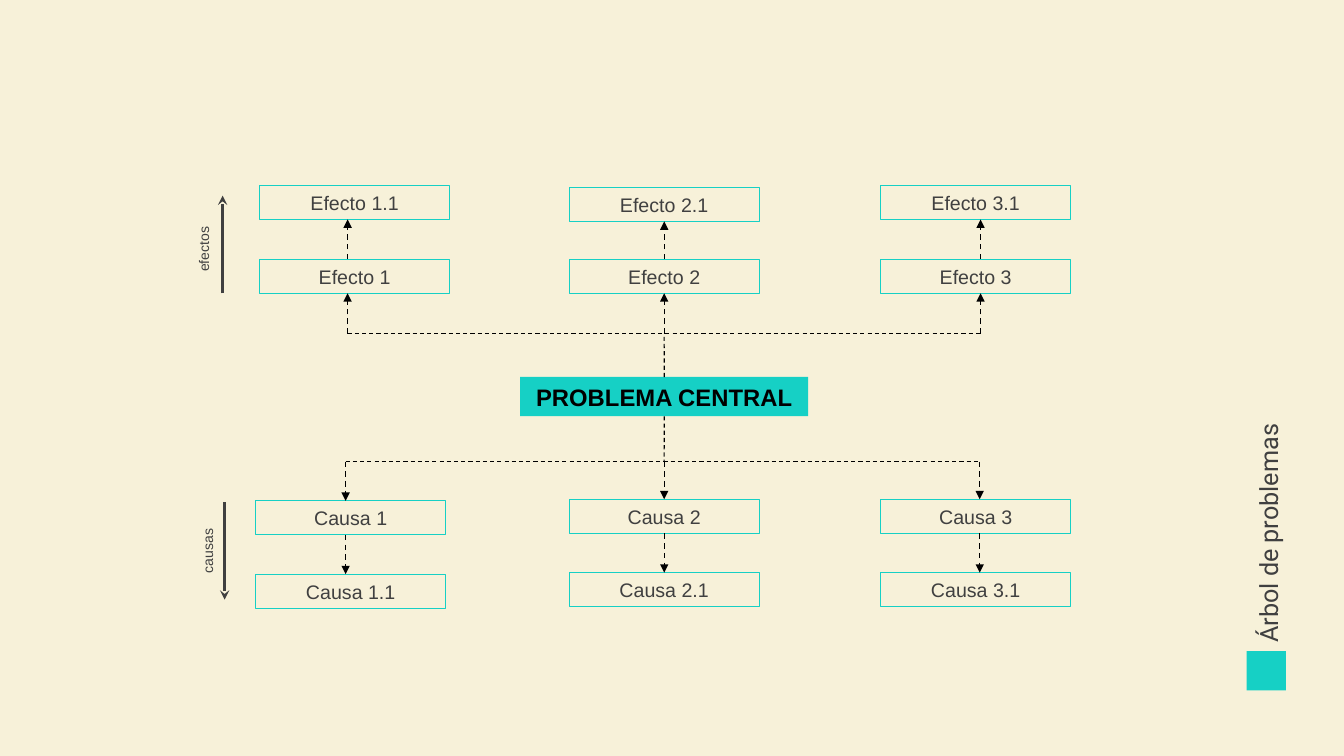
from lxml import etree
from pptx import Presentation
from pptx.dml.color import RGBColor
from pptx.enum.dml import MSO_LINE
from pptx.enum.shapes import MSO_CONNECTOR, MSO_SHAPE
from pptx.enum.text import MSO_ANCHOR, MSO_AUTO_SIZE, PP_ALIGN
from pptx.oxml.ns import qn
from pptx.util import Cm, Pt

RECT = MSO_SHAPE.RECTANGLE
STRAIGHT = MSO_CONNECTOR.STRAIGHT
DASH = MSO_LINE.DASH
CENTER = PP_ALIGN.CENTER
MIDDLE = MSO_ANCHOR.MIDDLE
FIXED = MSO_AUTO_SIZE.NONE

CREAM = RGBColor(0xF7, 0xF1, 0xD9)
TEAL = RGBColor(0x16, 0xD0, 0xC5)
GRAY = RGBColor(0x40, 0x40, 0x40)
BLACK = RGBColor(0, 0, 0)

TOP, BOTTOM = 0, 2
MID = 16.74
WIDE, HIGH = 4.78, 0.86
UP_BAR, LOW_BAR = 8.41, 11.63

EFFECTS = [
    ("Efecto 1", 6.55, 6.53, 4.67, 8.76),
    ("Efecto 2", MID - WIDE / 2, 6.53, 4.72, MID),
    ("Efecto 3", 22.2, 6.53, 4.67, 24.71),
]
CAUSES = [
    ("Causa 1", 6.45, 12.62, 14.47, 8.71),
    ("Causa 2", MID - WIDE / 2, 12.58, 14.43, MID),
    ("Causa 3", 22.2, 12.58, 14.43, 24.69),
]


def write(shape, text, size, color=GRAY, font="Arial", bold=False):
    frame = shape.text_frame
    frame.text = text
    frame.auto_size = FIXED
    frame.word_wrap = True
    frame.vertical_anchor = MIDDLE
    frame.margin_left = frame.margin_right = 0
    frame.margin_top = frame.margin_bottom = 0
    par = frame.paragraphs[0]
    par.alignment = CENTER
    par.font.size = Pt(size)
    par.font.name = font
    par.font.bold = bold
    par.font.color.rgb = color


def add_box(slide, left, top, width, height, filled=False):
    box = slide.shapes.add_shape(RECT, Cm(left), Cm(top), Cm(width), Cm(height))
    box.shadow.inherit = False
    if filled:
        box.fill.solid()
        box.fill.fore_color.rgb = TEAL
        box.line.fill.background()
    else:
        box.fill.background()
        box.line.color.rgb = TEAL
        box.line.width = Pt(0.75)
    return box


def add_line(slide, start, end, width=0.75, color=BLACK, dash=DASH, head=None):
    line = slide.shapes.add_connector(
        STRAIGHT, Cm(start[0]), Cm(start[1]), Cm(end[0]), Cm(end[1]))
    line.line.color.rgb = color
    line.line.width = Pt(width)
    line.line.dash_style = dash
    props = line._element.spPr
    if head:
        etree.SubElement(props.find(qn("a:ln")), qn("a:tailEnd"), type=head)
    etree.SubElement(props, qn("a:effectLst"))
    return line


def add_branch(slide, name, left, near, far, x, bar):
    inner = add_box(slide, left, near, WIDE, HIGH)
    write(inner, name, 14)
    outer = add_box(slide, left, far, WIDE, HIGH)
    write(outer, f"{name}.1", 14)
    rising = far < near
    enter, leave = (BOTTOM, TOP) if rising else (TOP, BOTTOM)
    near_in, near_out = (near + HIGH, near) if rising else (near, near + HIGH)
    far_in = far + HIGH if rising else far
    stem = add_line(slide, (x, bar), (x, near_in), 1, head="triangle")
    link = add_line(slide, (x, near_out), (x, far_in), 1, head="triangle")
    if x == MID:
        stem.end_connect(inner, enter)
        link.begin_connect(inner, leave)
        link.end_connect(outer, enter)


def add_side(slide, text, left, top, x, start, end):
    add_line(slide, (x, start), (x, end), 2.25, GRAY, None, "stealth")
    label = slide.shapes.add_textbox(Cm(left), Cm(top), Cm(1.68), Cm(0.69))
    label.rotation = 270
    write(label, text, 10)


def add_title(slide):
    title = slide.shapes.title
    title.left, title.top = Cm(28.83), Cm(12.93)
    title.width, title.height = Cm(6.25), Cm(1.02)
    title.rotation = 270
    write(title, "Árbol de problemas", 18, font="Roboto")
    add_box(slide, 31.42, 16.41, 0.99, 0.99, True)


def main():
    deck = Presentation()
    deck.slide_width, deck.slide_height = Cm(33.87), Cm(19.05)
    slide = deck.slides.add_slide(deck.slide_layouts[5])
    slide.background.fill.solid()
    slide.background.fill.fore_color.rgb = CREAM
    add_title(slide)

    core = add_box(slide, MID - 3.63, 9.5, 7.26, 0.99, True)
    write(core, "PROBLEMA CENTRAL", 17, BLACK, bold=True)
    for rows, bar, side, edge in (
            (EFFECTS, UP_BAR, TOP, 9.5), (CAUSES, LOW_BAR, BOTTOM, 10.49)):
        add_line(slide, (rows[0][-1], bar), (rows[-1][-1], bar))
        trunk = add_line(slide, (MID, edge), (MID, bar))
        trunk.begin_connect(core, side)
        for row in rows:
            add_branch(slide, *row, bar)

    add_side(slide, "efectos", 4.29, 5.94, 5.61, 7.39, 4.93)
    add_side(slide, "causas", 4.39, 13.54, 5.66, 12.65, 15.11)
    deck.save("out.pptx")


if __name__ == "__main__":
    main()
